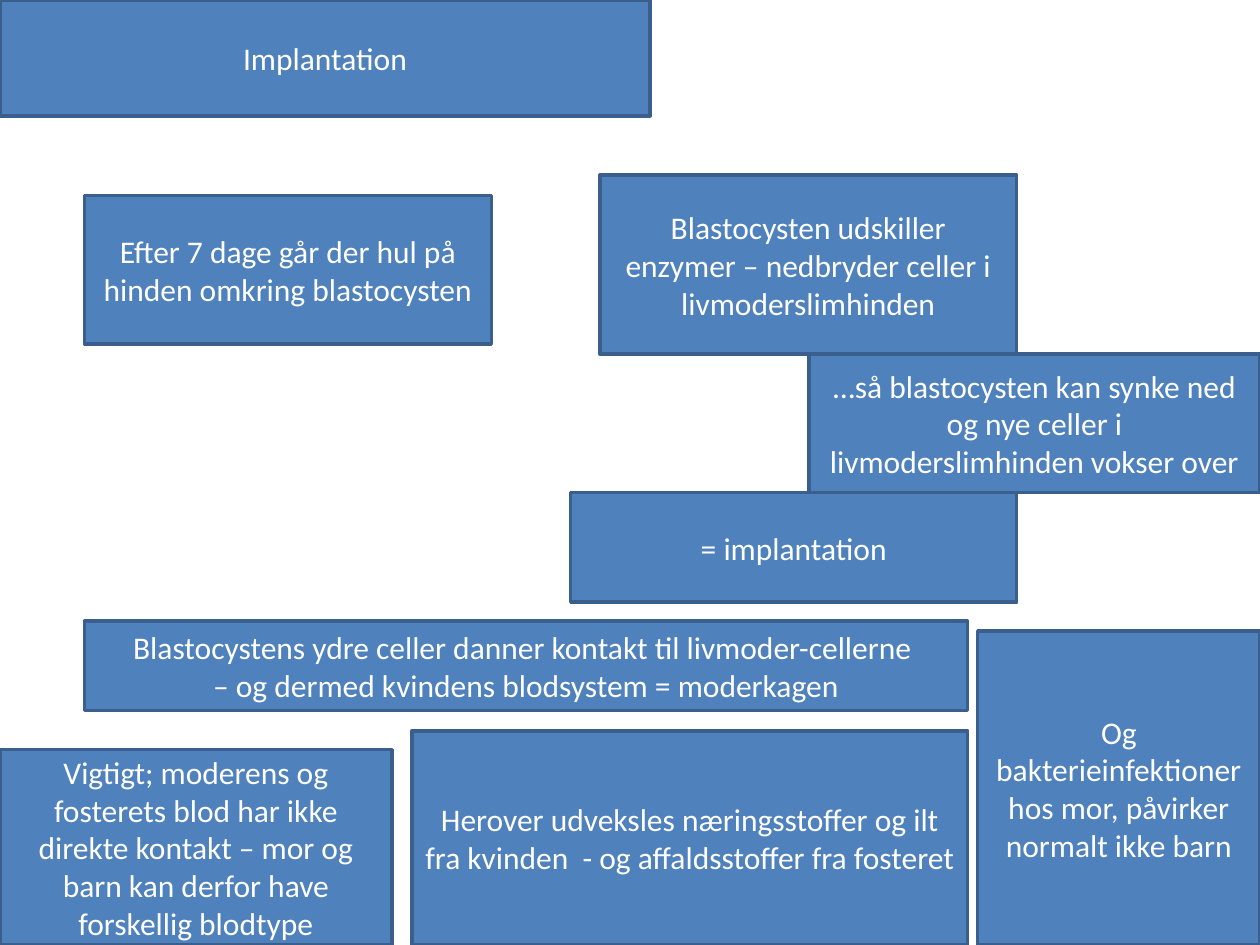
from pptx import Presentation
from pptx.dml.color import RGBColor
from pptx.enum.shapes import MSO_SHAPE
from pptx.enum.text import MSO_ANCHOR, PP_ALIGN
from pptx.util import Inches, Pt

WIDTH, HEIGHT = 10, 7.5
COLORS = {"fill": "4F81BD", "line": "3A5F8C", "text": "FFFFFF"}
FONT_NAME, FONT_SIZE, LINE_WIDTH = "Calibri", 18, 2

# Shared edges, in inches
MARGIN = 0.67          # left edge of the indented boxes
STEP_RIGHT = 8.07      # right edge of the enzyme and implantation boxes
CONTACT_RIGHT = 7.68   # right edge of the placenta and exchange boxes
SINK_TOP, SINK_BOTTOM = 2.81, 3.91

# Each box: (left, top, right, bottom), paragraphs
BOXES = [
    ((0, 0, 5.16, 0.92), ["Implantation"]),
    ((MARGIN, 1.55, 3.9, 2.73),
     ["Efter 7 dage går der hul på hinden omkring blastocysten"]),
    ((4.76, 1.39, STEP_RIGHT, SINK_TOP),
     ["Blastocysten udskiller enzymer – nedbryder celler i livmoderslimhinden"]),
    ((6.42, SINK_TOP, WIDTH, SINK_BOTTOM),
     ["…så blastocysten kan synke ned og nye celler i livmoderslimhinden vokser over"]),
    ((4.53, SINK_BOTTOM, STEP_RIGHT, 4.78), ["= implantation"]),
    ((MARGIN, 4.93, CONTACT_RIGHT, 5.64),
     ["Blastocystens ydre celler danner kontakt til livmoder-cellerne ",
      "– og dermed kvindens blodsystem = moderkagen"]),
    ((3.27, 5.8, CONTACT_RIGHT, HEIGHT),
     ["Herover udveksles næringsstoffer og ilt fra kvinden  - og affaldsstoffer fra fosteret"]),
    ((0, 5.95, 3.11, HEIGHT),
     ["Vigtigt; moderens og fosterets blod har ikke direkte kontakt – "
      "mor og barn kan derfor have forskellig blodtype"]),
    ((7.76, 5.01, WIDTH, HEIGHT),
     ["Og bakterieinfektioner hos mor, påvirker normalt ikke barn"]),
]


def color(name):
    return RGBColor.from_string(COLORS[name])


def add_box(slide, edges, paragraphs):
    left, top, right, bottom = edges
    shape = slide.shapes.add_shape(
        MSO_SHAPE.RECTANGLE, Inches(left), Inches(top),
        Inches(right - left), Inches(bottom - top))
    shape.shadow.inherit = False
    shape.fill.solid()
    shape.fill.fore_color.rgb = color("fill")
    shape.line.color.rgb = color("line")
    shape.line.width = Pt(LINE_WIDTH)

    text_frame = shape.text_frame
    text_frame.word_wrap = True
    text_frame.vertical_anchor = MSO_ANCHOR.MIDDLE
    for index, text in enumerate(paragraphs):
        paragraph = text_frame.add_paragraph() if index else text_frame.paragraphs[0]
        paragraph.alignment = PP_ALIGN.CENTER
        run = paragraph.add_run()
        run.text = text
        run.font.name = FONT_NAME
        run.font.size = Pt(FONT_SIZE)
        run.font.color.rgb = color("text")


def main():
    presentation = Presentation()
    presentation.slide_width = Inches(WIDTH)
    presentation.slide_height = Inches(HEIGHT)
    slide = presentation.slides.add_slide(presentation.slide_layouts[6])
    for edges, paragraphs in BOXES:
        add_box(slide, edges, paragraphs)
    presentation.save("out.pptx")


if __name__ == "__main__":
    main()
